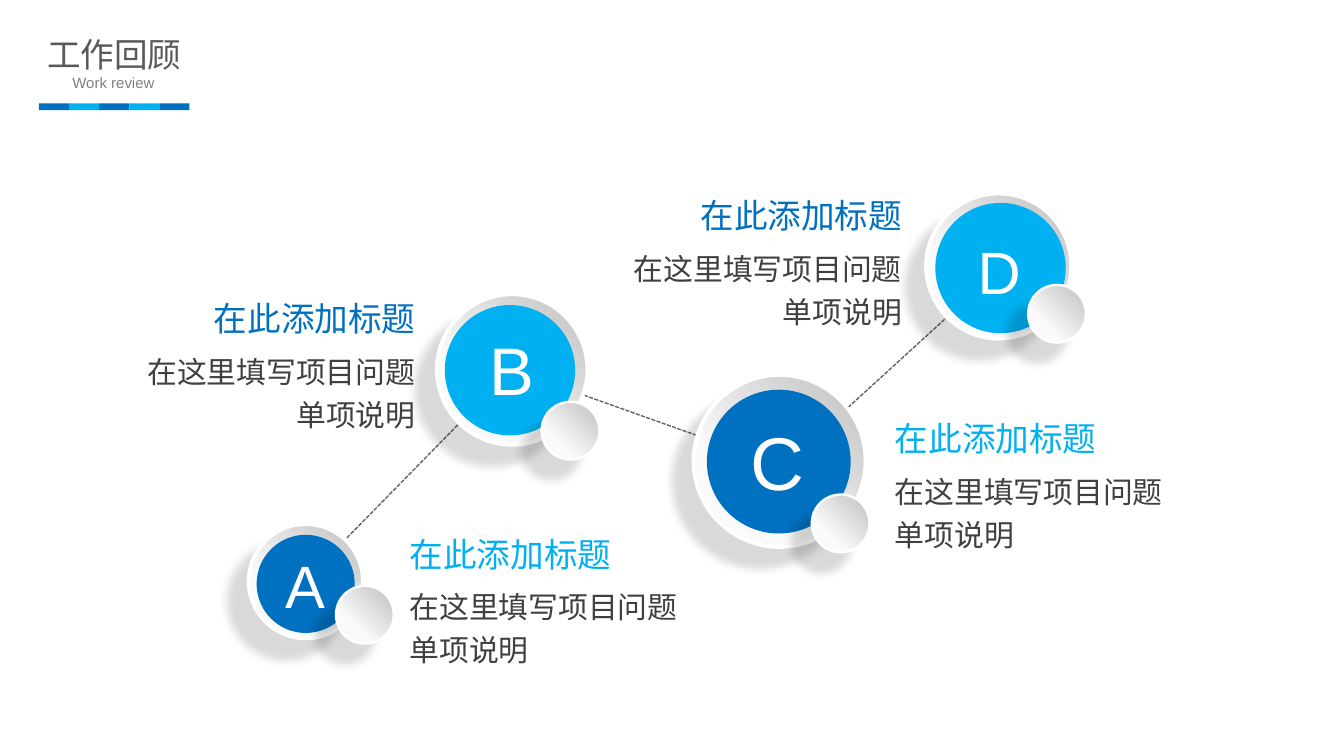
from dataclasses import dataclass
from itertools import pairwise

from lxml import etree
from pptx import Presentation
from pptx.dml.color import RGBColor
from pptx.enum.dml import MSO_LINE
from pptx.enum.shapes import MSO_CONNECTOR, MSO_SHAPE
from pptx.enum.text import MSO_ANCHOR, PP_ALIGN
from pptx.oxml.ns import qn
from pptx.util import Inches, Pt

OVAL, RECTANGLE = MSO_SHAPE.OVAL, MSO_SHAPE.RECTANGLE
LEFT, CENTER, RIGHT = PP_ALIGN.LEFT, PP_ALIGN.CENTER, PP_ALIGN.RIGHT
TOP, MIDDLE = MSO_ANCHOR.TOP, MSO_ANCHOR.MIDDLE

SLIDE_WIDTH = 10
SLIDE_HEIGHT = SLIDE_WIDTH * 9 / 16
COLORS = {
    "blue": "0070C0", "sky": "00B0F0", "white": "FFFFFF", "black": "000000",
    "title": "595959", "subtitle": "808080", "body": "404040",
    "line": "626262", "rim_dark": "BFBFBF", "rim_light": "FAFAFA",
}
HEADING = "在此添加标题"
BODY = "在这里填写项目问题单项说明"
HEADING_WIDTH, BODY_WIDTH = 1.9, 2.36
BEAD_SIZE = 0.43
BAR_LEFT, BAR_RIGHT, BAR_COUNT = 0.29, 1.41, 5


@dataclass
class Node:
    letter: str
    letter_size: int
    letter_box: tuple
    disc: tuple  # left, top, diameter
    face: tuple
    bead: tuple  # left, top
    anchor: tuple  # where the dashed lines meet
    color: str
    heading_color: str
    text_edge: float  # the box side that the text is aligned to
    text_top: float
    align: PP_ALIGN


NODES = [
    Node("A", 32, (2.02, 4.03, 0.5, 0.64), (1.85, 3.9, 0.85), (1.91, 3.98, 0.73),
         (2.5, 4.36), (2.27, 4.32), "blue", "sky", 2.95, 3.92, LEFT),
    Node("B", 36, (3.54, 2.39, 0.54, 0.71), (3.25, 2.19, 1.12), (3.31, 2.27, 0.97),
         (4.03, 2.99), (3.81, 2.75), "sky", "blue", 3.19, 2.17, RIGHT),
    Node("C", 40, (5.48, 3.04, 0.61, 0.77), (5.16, 2.79, 1.28), (5.26, 2.9, 1.07),
         (6.04, 3.68), (5.83, 3.47), "blue", "sky", 6.56, 3.06, LEFT),
    Node("D", 32, (7.17, 1.69, 0.53, 0.64), (6.89, 1.44, 1.08), (6.96, 1.51, 0.97),
         (7.65, 2.12), (7.66, 1.8), "sky", "blue", 6.81, 1.4, RIGHT),
]


def rgb(name):
    return RGBColor.from_string(COLORS[name])


def write_text(shape, text, size, color, align=LEFT, anchor=TOP, wrap=True, spacing=None):
    frame = shape.text_frame
    frame.word_wrap = wrap
    frame.vertical_anchor = anchor
    frame.text = text
    paragraph = frame.paragraphs[0]
    paragraph.alignment = align
    if spacing:
        paragraph.line_spacing = spacing
    paragraph.font.name = "Arial"
    paragraph.font.size = Pt(size)
    paragraph.font.color.rgb = rgb(color)


def add_text(slide, box, *args, **options):
    write_text(slide.shapes.add_textbox(*map(Inches, box)), *args, **options)


def add_flat_shape(slide, kind, box, color):
    shape = slide.shapes.add_shape(kind, *map(Inches, box))
    shape.shadow.inherit = False
    shape.fill.solid()
    shape.fill.fore_color.rgb = rgb(color)
    shape.line.fill.background()


def add_raised_circle(slide, left, top, diameter, line_width):
    """Add a silver gradient circle with a white rim and a soft shadow."""
    circle = slide.shapes.add_shape(OVAL, *map(Inches, (left, top, diameter, diameter)))
    circle.fill.gradient()
    circle.fill.gradient_angle = 225
    dark, light = circle.fill.gradient_stops
    dark.color.rgb, dark.position = rgb("rim_dark"), 0
    light.color.rgb, light.position = rgb("rim_light"), 0.7
    circle.line.color.rgb = rgb("white")
    circle.line.width = Pt(line_width)

    circle.shadow.inherit = False
    effects = circle.element.spPr.find(qn("a:effectLst"))
    shadow = etree.SubElement(effects, qn("a:outerShdw"), blurRad=str(Pt(5)),
                              dist=str(Pt(15)), dir=str(135 * 60000),
                              algn="tr", rotWithShape="0")
    color = etree.SubElement(shadow, qn("a:srgbClr"), val=COLORS["black"])
    etree.SubElement(color, qn("a:alpha"), val="15000")


def add_dashed_line(slide, start, end):
    connector = slide.shapes.add_connector(
        MSO_CONNECTOR.STRAIGHT, *map(Inches, (*start, *end)))
    connector.line.color.rgb = rgb("line")
    connector.line.width = Pt(0.75)
    connector.line.dash_style = MSO_LINE.SQUARE_DOT
    line = connector.element.spPr.find(qn("a:ln"))
    for end_tag in ("a:headEnd", "a:tailEnd"):
        etree.SubElement(line, qn(end_tag), type="oval")
    etree.SubElement(connector.element.spPr, qn("a:effectLst"))


def add_description(slide, node):
    def left(width):
        return node.text_edge - (width if node.align == RIGHT else 0)

    add_text(slide, (left(BODY_WIDTH), node.text_top + 0.36, BODY_WIDTH, 0.75),
             BODY, 16, "body", node.align, spacing=1.2)
    add_text(slide, (left(HEADING_WIDTH), node.text_top, HEADING_WIDTH, 0.42),
             HEADING, 18, node.heading_color, node.align)


def add_badge(slide, node):
    left, top, diameter = node.face
    add_flat_shape(slide, OVAL, (left, top, diameter, diameter), node.color)
    add_raised_circle(slide, *node.bead, BEAD_SIZE, 1.25)
    add_text(slide, node.letter_box, node.letter, node.letter_size, "white",
             CENTER, MIDDLE, wrap=False)


def add_header(slide):
    title = slide.shapes.title
    title.left, title.top, title.width, title.height = map(Inches, (0.27, 0.21, 1.16, 0.38))
    frame = title.text_frame
    frame.margin_left = frame.margin_right = Inches(0.07)
    frame.margin_top = frame.margin_bottom = Inches(0.04)
    write_text(title, "工作回顾", 18, "title", CENTER, wrap=False)
    add_text(slide, (-0.12, 0.5, 1.93, 0.24), "Work review", 8, "subtitle", CENTER)
    bar_width = (BAR_RIGHT - BAR_LEFT) / BAR_COUNT
    for index in range(BAR_COUNT):
        add_flat_shape(slide, RECTANGLE, (BAR_LEFT + index * bar_width, 0.77, bar_width, 0.05),
                       ("blue", "sky")[index % 2])


def main():
    presentation = Presentation()
    presentation.slide_width = Inches(SLIDE_WIDTH)
    presentation.slide_height = Inches(SLIDE_HEIGHT)
    slide = presentation.slides.add_slide(presentation.slide_layouts[5])
    for start, end in pairwise(NODES):
        add_dashed_line(slide, start.anchor, end.anchor)
    for node in NODES:
        add_raised_circle(slide, *node.disc, 2)
    for node in NODES:
        add_description(slide, node)
    for node in NODES:
        add_badge(slide, node)
    add_header(slide)
    presentation.save("out.pptx")


if __name__ == "__main__":
    main()
